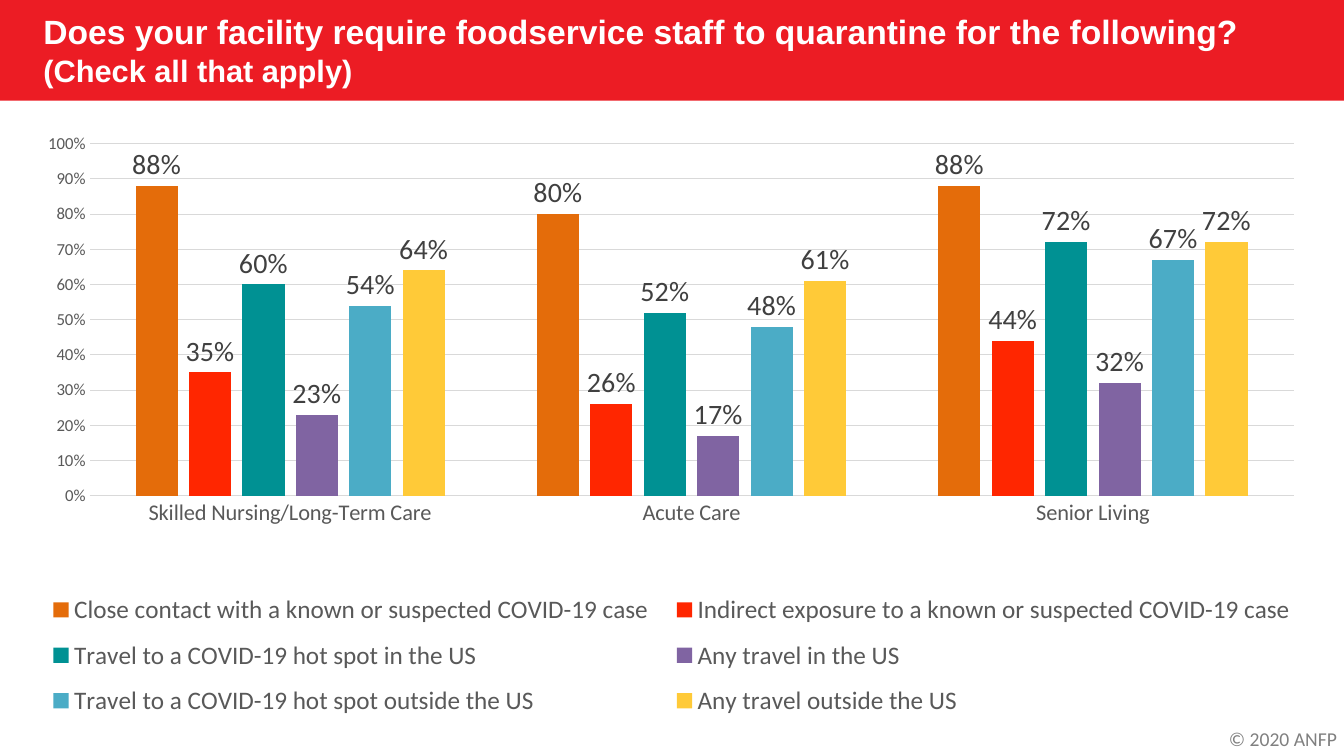
from lxml import etree
from pptx import Presentation
from pptx.chart.data import CategoryChartData
from pptx.dml.color import RGBColor
from pptx.enum.chart import XL_CHART_TYPE as ChartType, XL_LABEL_POSITION as LabelPosition
from pptx.enum.chart import XL_LEGEND_POSITION as LegendPosition, XL_TICK_MARK as TickMark
from pptx.enum.shapes import MSO_SHAPE as Shape
from pptx.enum.text import MSO_ANCHOR as Anchor, MSO_AUTO_SIZE as AutoSize, PP_ALIGN as Align
from pptx.oxml.ns import qn
from pptx.util import Cm, Pt

CATEGORIES = ["Skilled Nursing/Long-Term Care", "Acute Care", "Senior Living"]
ANSWERS = [
    ("Close contact with a known or suspected COVID-19 case", "E46C0A", (0.88, 0.80, 0.88)),
    ("Indirect exposure to a known or suspected COVID-19 case", "FF2600", (0.35, 0.26, 0.44)),
    ("Travel to a COVID-19 hot spot in the US", "009193", (0.60, 0.52, 0.72)),
    ("Any travel in the US", "8064A2", (0.23, 0.17, 0.32)),
    ("Travel to a COVID-19 hot spot outside the US", "4BACC6", (0.54, 0.48, 0.67)),
    ("Any travel outside the US", "FFCA38", (0.64, 0.61, 0.72)),
]


def color(hex_code):
    return RGBColor.from_string(hex_code)


def manual_layout(x, y, w, h, inner=False):
    """Return a c:layout element placed by fractions of the chart area."""
    layout = etree.Element(qn("c:layout"))
    manual = etree.SubElement(layout, qn("c:manualLayout"))
    settings = [("layoutTarget", "inner")] if inner else []
    settings += [("xMode", "edge"), ("yMode", "edge"), ("x", x), ("y", y), ("w", w), ("h", h)]
    for tag, value in settings:
        etree.SubElement(manual, qn(f"c:{tag}")).set("val", str(value))
    return layout


class SurveySlide:
    red, white, gray, label_gray, grid_gray = "EC1C24", "FFFFFF", "595959", "404040", "D9D9D9"
    title_font, body_font = "Arial", "Calibri"

    def __init__(self, deck):
        self.page = deck.slides.add_slide(deck.slide_layouts[5])
        self.width = deck.slide_width

    def style(self, font, size, hex_code, name=None, bold=False):
        font.name, font.size, font.bold = name or self.body_font, Pt(size), bold
        font.color.rgb = color(hex_code)

    def title(self, lines):
        box = self.page.shapes.title
        box.left, box.top, box.width, box.height = Cm(0.84), Cm(0.3), Cm(32.6), Cm(1.9)
        frame = box.text_frame
        frame.auto_size, frame.vertical_anchor = AutoSize.NONE, Anchor.MIDDLE
        for index, (text, size) in enumerate(lines):
            para = frame.add_paragraph() if index else frame.paragraphs[0]
            para.alignment = Align.LEFT
            span = para.add_run()
            span.text = text
            self.style(span.font, size, self.white, self.title_font, bold=True)

    def title_band(self):
        """Draw the red band behind the title."""
        band = self.page.shapes.add_shape(Shape.RECTANGLE, 0, 0, self.width, Cm(2.54))
        band.shadow.inherit = False
        band.fill.solid()
        band.fill.fore_color.rgb = color(self.red)
        band.line.fill.background()
        self.page.shapes.title.element.addprevious(band.element)

    def column_chart(self, categories, answers):
        data = CategoryChartData(number_format="0%")
        data.categories = categories
        for name, _, values in answers:
            data.add_series(name, values)
        chart = self.page.shapes.add_chart(
            ChartType.COLUMN_CLUSTERED, Cm(0.84), Cm(3.18), Cm(32.18), Cm(15.24), data).chart
        chart.has_title = False
        self.style(chart.font, 10, "000000")
        plot = chart.plots[0]
        plot.gap_width, plot.overlap, plot.vary_by_categories = 219, -27, False
        for series, (_, fill, _) in zip(plot.series, answers):
            series.format.fill.solid()
            series.format.fill.fore_color.rgb = color(fill)
            labels = series.data_labels
            labels.show_value, labels.position = True, LabelPosition.OUTSIDE_END
            labels.number_format, labels.number_format_is_linked = "0%", False
            self.style(labels.font, 20, self.label_gray)
        self.axes(chart)
        self.legend(chart)
        area = chart.element.find(f".//{qn('c:plotArea')}")
        for layout in area.findall(qn("c:layout")):
            area.remove(layout)
        area.insert(0, manual_layout(0.044, 0.029, 0.943, 0.582, inner=True))

    def axes(self, chart):
        for axis, size in ((chart.category_axis, 16), (chart.value_axis, 12)):
            axis.major_tick_mark = axis.minor_tick_mark = TickMark.NONE
            self.style(axis.tick_labels.font, size, self.gray)
        scale = chart.value_axis
        scale.minimum_scale, scale.maximum_scale, scale.major_unit = 0, 1, 0.1
        scale.tick_labels.number_format = "0%"
        scale.tick_labels.number_format_is_linked = False
        scale.format.line.fill.background()
        for line in (chart.category_axis.format.line, scale.major_gridlines.format.line):
            line.color.rgb = color(self.grid_gray)
            line.width = Pt(0.75)

    def legend(self, chart):
        chart.has_legend = True
        legend = chart.legend
        legend.position, legend.include_in_layout = LegendPosition.BOTTOM, False
        self.style(legend.font, 18, self.gray)
        element = chart.element.find(f".//{qn('c:legend')}")
        for layout in element.findall(qn("c:layout")):
            element.remove(layout)
        element.find(qn("c:legendPos")).addnext(manual_layout(0, 0.75, 1, 0.25))

    def copyright_line(self, text):
        box = self.page.shapes.add_textbox(Cm(30.8), Cm(18.19), Cm(3.07), Cm(0.86))
        frame = box.text_frame
        frame.word_wrap = True
        frame.margin_left = frame.margin_right = 0
        para = frame.paragraphs[0]
        para.alignment = Align.CENTER
        span = para.add_run()
        span.text = text
        self.style(span.font, 14, "808080")


def main():
    deck = Presentation()
    deck.slide_width, deck.slide_height = Cm(33.87), Cm(19.05)
    slide = SurveySlide(deck)
    slide.title_band()
    slide.title([
        ("Does your facility require foodservice staff to quarantine for the following?", 24),
        ("(Check all that apply)", 22),
    ])
    slide.column_chart(CATEGORIES, ANSWERS)
    slide.copyright_line("© 2020 ANFP")
    deck.save("out.pptx")


if __name__ == "__main__":
    main()
